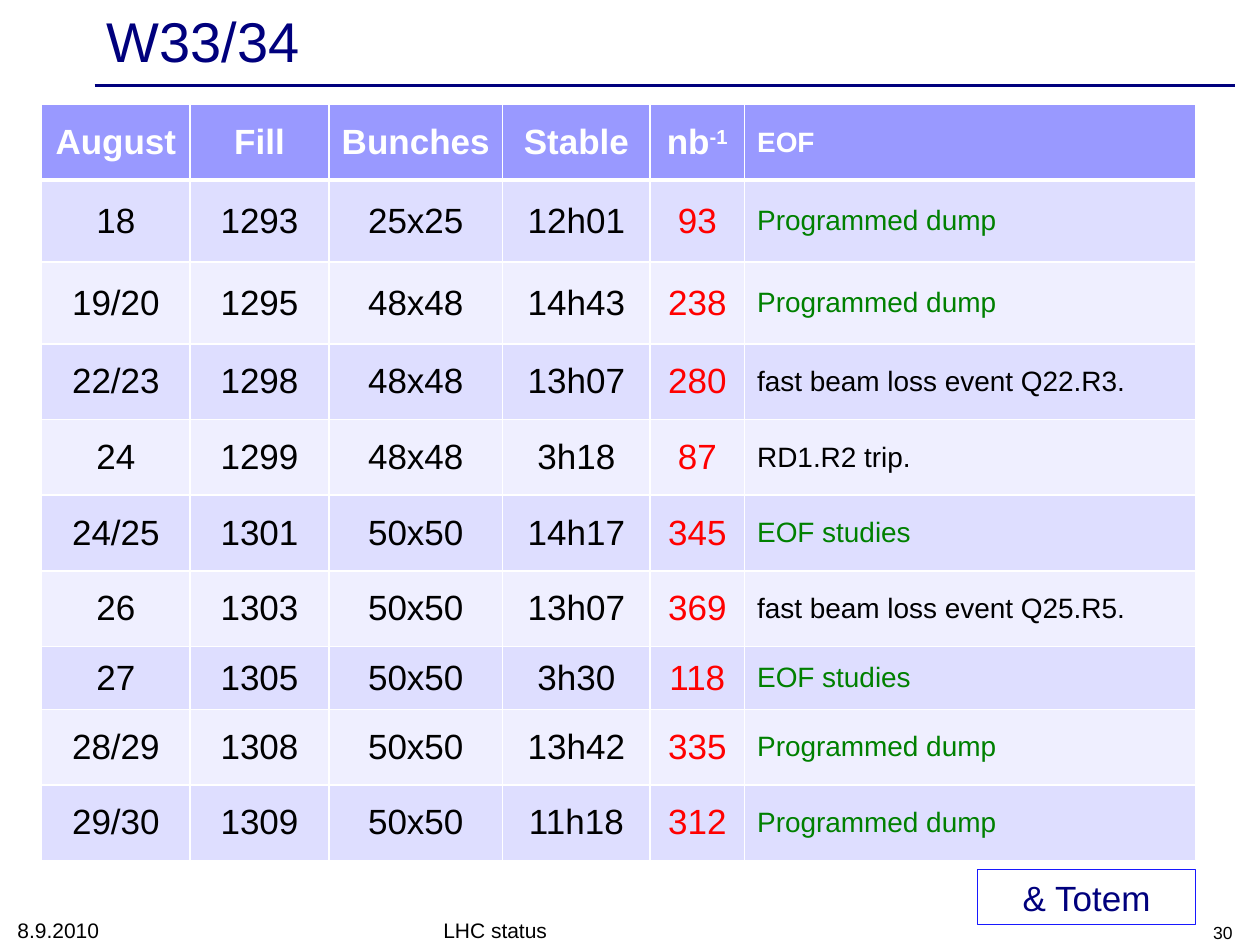
import lxml.etree
import pptx
import pptx.dml.color
import pptx.enum.shapes
import pptx.enum.text
import pptx.oxml.ns
import pptx.util

RGBColor = pptx.dml.color.RGBColor
Inches = pptx.util.Inches
Pt = pptx.util.Pt
ALIGN = pptx.enum.text.PP_ALIGN
ANCHOR = pptx.enum.text.MSO_ANCHOR
qn = pptx.oxml.ns.qn

NAVY = RGBColor(0x00, 0x00, 0x7D)
BLUE = RGBColor(0x18, 0x18, 0xFF)
HEADER = RGBColor(0x99, 0x99, 0xFF)
BANDS = (RGBColor(0xDE, 0xDE, 0xFF), RGBColor(0xEF, 0xEF, 0xFF))
WHITE = RGBColor(0xFF, 0xFF, 0xFF)
BLACK = RGBColor(0x00, 0x00, 0x00)
RED = RGBColor(0xFF, 0x00, 0x00)
GREEN = RGBColor(0x00, 0x80, 0x00)

DUMP = "Programmed dump"
STUDIES = "EOF studies"
HEADINGS = ("August", "Fill", "Bunches", "Stable", "nb", "EOF")
FILLS = (
    ("18", "1293", "25x25", "12h01", "93", DUMP),
    ("19/20", "1295", "48x48", "14h43", "238", DUMP),
    ("22/23", "1298", "48x48", "13h07", "280", "fast beam loss event Q22.R3."),
    ("24", "1299", "48x48", "3h18", "87", "RD1.R2 trip."),
    ("24/25", "1301", "50x50", "14h17", "345", STUDIES),
    ("26", "1303", "50x50", "13h07", "369", "fast beam loss event Q25.R5."),
    ("27", "1305", "50x50", "3h30", "118", STUDIES),
    ("28/29", "1308", "50x50", "13h42", "335", DUMP),
    ("29/30", "1309", "50x50", "11h18", "312", DUMP),
)
COLUMN_WIDTHS = (1.18, 1.1, 1.38, 1.17, 0.75, 3.58)
ROW_HEIGHTS = (0.6, 0.65, 0.65, 0.6, 0.6, 0.6, 0.6, 0.5, 0.6, 0.6)
LUMI, END = 4, 5  # columns with their own style


class SlideBuilder:
    font = "Arial"

    def __init__(self, slide):
        self.slide = slide

    def style(self, paragraph, size, color, align=ALIGN.LEFT, bold=False):
        paragraph.alignment = align
        for run in paragraph.runs:
            run.font.name = self.font
            run.font.size = Pt(size)
            run.font.bold = bold
            run.font.color.rgb = color

    def text(self, content, box, size, color=BLACK, align=ALIGN.LEFT,
             anchor=ANCHOR.BOTTOM):
        frame = self.slide.shapes.add_textbox(*map(Inches, box)).text_frame
        frame.word_wrap = True
        frame.vertical_anchor = anchor
        frame.text = content
        self.style(frame.paragraphs[0], size, color, align)

    def rule(self, start, end, color, width):
        line = self.slide.shapes.add_connector(
            pptx.enum.shapes.MSO_CONNECTOR.STRAIGHT,
            *map(Inches, start + end))
        line.line.color.rgb = color
        line.line.width = Pt(width)
        lxml.etree.SubElement(line._element.spPr, qn("a:effectLst"))

    def framed_note(self, content, box, size):
        note = self.slide.shapes.add_shape(
            pptx.enum.shapes.MSO_SHAPE.RECTANGLE, *map(Inches, box))
        note.shadow.inherit = False
        note.fill.background()
        note.line.color.rgb = BLUE
        note.line.width = Pt(0.75)
        note.text_frame.word_wrap = True
        note.text_frame.text = content
        self.style(note.text_frame.paragraphs[0], size, NAVY, ALIGN.CENTER)

    def borders(self, cell, widths):
        properties = cell._tc.get_or_add_tcPr()
        for side, width in widths.items():
            line = lxml.etree.SubElement(
                properties, qn("a:ln" + side), w=str(Pt(width)))
            fill = lxml.etree.SubElement(line, qn("a:solidFill"))
            lxml.etree.SubElement(fill, qn("a:srgbClr"), val=str(WHITE))

    def table(self, rows, left, top, widths, heights):
        size = (sum(widths), sum(heights))
        table = self.slide.shapes.add_table(
            len(rows), len(widths),
            *map(Inches, (left, top) + size)).table
        table.horz_banding = False
        for column, width in zip(table.columns, widths):
            column.width = Inches(width)
        for row, height in zip(table.rows, heights):
            row.height = Inches(height)
        for r, values in enumerate(rows):
            for c, value in enumerate(values):
                self.cell(table.cell(r, c), value, r, c)
        return table

    def cell(self, cell, value, r, c):
        is_header = r == 0
        self.borders(cell, {"L": 1, "R": 1, "T": 3 if r == 1 else 1,
                            "B": 3 if is_header else 1})
        cell.fill.solid()
        cell.fill.fore_color.rgb = HEADER if is_header else BANDS[(r - 1) % 2]
        cell.vertical_anchor = ANCHOR.MIDDLE
        if is_header:
            color = WHITE
        elif c == LUMI:
            color = RED
        elif value in (DUMP, STUDIES):
            color = GREEN
        else:
            color = BLACK
        cell.text_frame.text = value
        paragraph = cell.text_frame.paragraphs[0]
        if is_header and c == LUMI:
            exponent = paragraph.add_run()
            exponent.text = "-1"
            exponent.font._element.set("baseline", "30000")
        self.style(paragraph, 16 if c == END else 20, color,
                   ALIGN.LEFT if c == END else ALIGN.CENTER, is_header)


def main():
    deck = pptx.Presentation()
    deck.slide_width, deck.slide_height = Inches(10), Inches(7.5)
    builder = SlideBuilder(deck.slides.add_slide(deck.slide_layouts[6]))

    # Title and rule
    builder.rule((0.75, 0.68), (9.8, 0.68), NAVY, 2)
    builder.text("W33/34", (0.75, 0.03, 9, 0.57), 32, NAVY,
                 anchor=ANCHOR.MIDDLE)

    # Fills of the two weeks
    builder.table((HEADINGS,) + FILLS, 0.33, 0.83, COLUMN_WIDTHS, ROW_HEIGHTS)
    builder.framed_note("& Totem", (7.76, 6.9, 1.73, 0.44), 20)

    # Footer
    builder.text("8.9.2010", (0.04, 7.24, 2.33, 0.29), 12)
    builder.text("LHC status", (3.42, 7.25, 3.17, 0.28), 12)
    builder.text("30", (7.55, 7.25, 2.33, 0.28), 10, align=ALIGN.RIGHT)

    deck.save("out.pptx")


if __name__ == "__main__":
    main()
